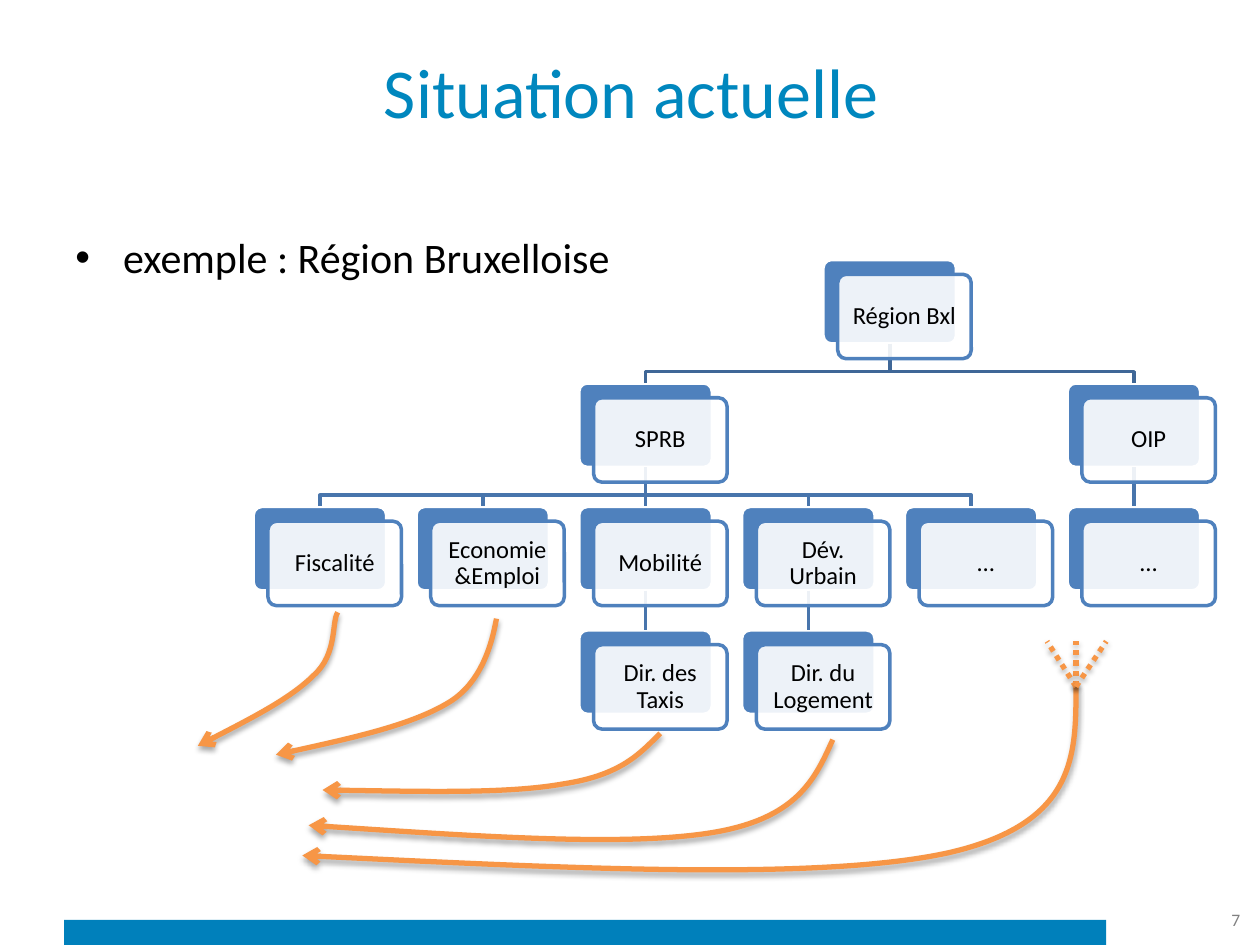
"""Build the slide on the current organisation of the Brussels Region."""
from dataclasses import dataclass

from lxml import etree
from pptx import Presentation
from pptx.dml.color import RGBColor
from pptx.enum.dml import MSO_LINE
from pptx.enum.shapes import MSO_CONNECTOR, MSO_SHAPE
from pptx.enum.text import MSO_ANCHOR, PP_ALIGN
from pptx.oxml import parse_xml
from pptx.oxml.ns import nsdecls, qn
from pptx.util import Inches, Pt

RECTANGLE, ROUNDED = MSO_SHAPE.RECTANGLE, MSO_SHAPE.ROUNDED_RECTANGLE
STRAIGHT, DOTTED = MSO_CONNECTOR.STRAIGHT, MSO_LINE.ROUND_DOT
TOP, MIDDLE = MSO_ANCHOR.TOP, MSO_ANCHOR.MIDDLE
LEFT, CENTER, RIGHT = PP_ALIGN.LEFT, PP_ALIGN.CENTER, PP_ALIGN.RIGHT
TOP_SITE, BOTTOM_SITE = 0, 2

GRID_COLUMNS, GRID_ROWS = 100, 75
CELL = Inches(0.1)
CHART_LEFT, CHART_TOP = 20.1, 20.6
COLUMN_STEP, ROW_STEP = 12.92, 9.8
CARD_WIDTH, CARD_HEIGHT = 10.6, 6.7
CARD_OFFSET, ELBOW_DROP = 1.17, 8.9


@dataclass(frozen=True)
class Theme:
    """Colours, font and type sizes of the slide."""
    font: str = "Calibri"
    title: str = "0087BE"
    band: str = "0080BB"
    text: str = "000000"
    muted: str = "808080"
    card: str = "4F81BD"
    paper: str = "FFFFFF"
    links: tuple = ("3F6797", "4875AC", "4875AC")
    arrow: str = "F79646"
    title_size: int = 40
    body_size: int = 24
    card_size: int = 14
    number_size: int = 10
    line_width: int = 2
    arrow_width: int = 3


THEME = Theme()

UNITS = {
    "region": ("Région Bxl", 3.5, 0, None),
    "sprb": ("SPRB", 2, 1, "region"),
    "oip": ("OIP", 5, 1, "region"),
    "tax": ("Fiscalité", 0, 2, "sprb"),
    "economy": ("Economie&Emploi", 1, 2, "sprb"),
    "mobility": ("Mobilité", 2, 2, "sprb"),
    "urban": ("Dév. Urbain", 3, 2, "sprb"),
    "other": ("…", 4, 2, "sprb"),
    "oip_other": ("…", 5, 2, "oip"),
    "taxis": ("Dir. des Taxis", 2, 3, "mobility"),
    "housing": ("Dir. du Logement", 3, 3, "urban"),
}

CURVES = [
    [(24, 67.9), (44.5, 68.9), (65, 69.9), (75.2, 67.7), (85.4, 65.4), (85.4, 60), (85.4, 54.5)],
    [(24.5, 65.5), (37, 66.3), (49.4, 67.2), (56.4, 66.1), (63.3, 65), (64.7, 61.8), (66.1, 58.7)],
    [(25.6, 62.7), (33, 62.8), (40.4, 63), (44.8, 62.2), (49.3, 61.5), (50.8, 59.8), (52.4, 58.2)],
    [(21.9, 59.9), (27.4, 58.7), (32.8, 57.5), (35.7, 55.7), (38.6, 53.9), (39.2, 50.1), (39.4, 49.1)],
    [(15.7, 59.2), (19.4, 57.3), (23.1, 55.4), (24.9, 53.6), (26.8, 51.9), (26.3, 49.4), (26.8, 48.6)],
]
FORK_BASE, FORK_TOP, FORK_TIPS = (85.4, 54.5), 50.9, (85.4, 83.1, 87.8)


def cells(*values):
    """Turn grid cells into slide lengths."""
    return [round(value * CELL) for value in values]


def color(value):
    """Make a colour from its hex code."""
    return RGBColor.from_string(value)


def set_line(shape, value, width):
    """Give an outline its colour and width."""
    shape.line.color.rgb = color(value)
    shape.line.width = Pt(width)


def add_effects(shape, shadowed):
    """Set either a soft shadow or no effect at all."""
    shadow = ('<a:outerShdw blurRad="40000" dist="23000" dir="5400000" rotWithShape="0">'
              '<a:srgbClr val="000000"><a:alpha val="35000"/></a:srgbClr></a:outerShdw>')
    content = shadow if shadowed else ""
    properties = shape.element.spPr
    for effects in properties.findall(qn("a:effectLst")):
        properties.remove(effects)
    properties.append(parse_xml(f'<a:effectLst {nsdecls("a")}>{content}</a:effectLst>'))


def write(frame, text, size, value, align=CENTER, anchor=MIDDLE):
    """Write one styled paragraph into a text frame."""
    frame.word_wrap = True
    frame.vertical_anchor = anchor
    para = frame.paragraphs[0]
    para.text = text
    para.alignment = align
    para.font.name = THEME.font
    para.font.size = Pt(size)
    para.font.color.rgb = color(value)
    return para


def add_text(page, area, *style):
    """Add a text box over an area of the grid."""
    box = page.shapes.add_textbox(*cells(*area))
    write(box.text_frame, *style)
    return box


def add_bullet_text(page, area, text, drop):
    """Add a bulleted line below the top of its box."""
    box = page.shapes.add_textbox(*cells(*area))
    box.text_frame.margin_top = cells(drop)[0]
    properties = box.text_frame.paragraphs[0]._p.get_or_add_pPr()
    indent = Inches(0.38)
    properties.set("marL", str(indent))
    properties.set("indent", str(-indent))
    etree.SubElement(properties, qn("a:buFont")).set("typeface", "Arial")
    etree.SubElement(properties, qn("a:buChar")).set("char", "•")
    write(box.text_frame, text, THEME.body_size, THEME.text, LEFT, TOP)


def add_panel(page, kind, area, fill):
    """Add a filled shape without shadow or outline."""
    panel = page.shapes.add_shape(kind, *cells(*area))
    panel.shadow.inherit = False
    panel.fill.solid()
    panel.fill.fore_color.rgb = color(fill)
    panel.line.fill.background()
    return panel


def add_card(page, column, row, fill, outline, offset=0):
    """Add a rounded card at a column and row of the chart."""
    area = (CHART_LEFT + column * COLUMN_STEP + offset,
            CHART_TOP + row * ROW_STEP + offset, CARD_WIDTH, CARD_HEIGHT)
    card = add_panel(page, ROUNDED, area, fill)
    card.adjustments[0] = 0.1
    set_line(card, outline, THEME.line_width)
    return card


def add_label_card(page, label, column, row):
    """Add the translucent front card with its label."""
    card = add_card(page, column, row, THEME.paper, THEME.card, CARD_OFFSET)
    paint = card.element.spPr.find(qn("a:solidFill"))[0]
    etree.SubElement(paint, qn("a:alpha")).set("val", "90000")
    frame = card.text_frame
    frame.margin_left = frame.margin_right = Inches(0.08)
    frame.margin_top = frame.margin_bottom = Inches(0.08)
    write(frame, label, THEME.card_size, THEME.text).line_spacing = 0.9


def add_open_line(page, points):
    """Add an unfilled open line through grid points."""
    start, *rest = [cells(*point) for point in points]
    builder = page.shapes.build_freeform(*start)
    builder.add_line_segments(rest, close=False)
    shape = builder.convert_to_shape()
    shape.fill.background()
    return shape


def add_link(page, parent, child, parent_row):
    """Link a parent card to a child card, with an elbow if needed."""
    start, end = [(card.left + card.width / 2) / CELL for card in (parent, child)]
    if abs(start - end) < 0.1:
        link = page.shapes.add_connector(STRAIGHT, 0, 0, 0, 0)
        link.begin_connect(parent, BOTTOM_SITE)
        link.end_connect(child, TOP_SITE)
    else:
        top = CHART_TOP + parent_row * ROW_STEP
        elbow = top + ELBOW_DROP
        link = add_open_line(page, [(start, top + CARD_HEIGHT), (start, elbow),
                                    (end, elbow), (end, top + ROW_STEP)])
    set_line(link, THEME.links[parent_row], THEME.line_width)
    add_effects(link, shadowed=False)


def add_curved_arrow(page, points):
    """Add a shadowed Bézier curve with an arrowhead at its start."""
    curve = add_open_line(page, points)
    steps = list(curve.element.iter(qn("a:lnTo")))
    outline = steps[0].getparent()
    for first in range(0, len(steps), 3):
        bend = etree.SubElement(outline, qn("a:cubicBezTo"))
        for step in steps[first:first + 3]:
            bend.append(step[0])
            outline.remove(step)
    set_line(curve, THEME.arrow, THEME.arrow_width)
    etree.SubElement(curve.get_or_add_ln(), qn("a:headEnd")).set("type", "arrow")
    add_effects(curve, shadowed=True)


def add_fork(page):
    """Add the dotted lines that fan out from the longest arrow."""
    for tip in FORK_TIPS:
        prong = page.shapes.add_connector(STRAIGHT, *cells(*FORK_BASE, tip, FORK_TOP))
        set_line(prong, THEME.arrow, THEME.arrow_width)
        prong.line.dash_style = DOTTED
        add_effects(prong, shadowed=True)


def add_organisation(page):
    """Add back cards, links and labelled cards from back to front."""
    backs = {name: add_card(page, column, row, THEME.card, THEME.paper)
             for name, (_, column, row, _) in UNITS.items()}
    for name, (_, _, row, parent) in UNITS.items():
        if parent:
            add_link(page, backs[parent], backs[name], row - 1)
    for label, column, row, _ in UNITS.values():
        add_label_card(page, label, column, row)


def main():
    """Build and save the deck."""
    deck = Presentation()
    deck.slide_width, deck.slide_height = cells(GRID_COLUMNS, GRID_ROWS)
    page = deck.slides.add_slide(deck.slide_layouts[6])
    add_panel(page, RECTANGLE, (5.1, 73, 82.7, 2), THEME.band)
    add_text(page, (5.1, 2.1, 90, 10.1), "Situation actuelle", THEME.title_size, THEME.title)
    add_bullet_text(page, (5, 13.1, 90, 55.9), "exemple : Région Bruxelloise", 5.3)
    add_text(page, (91.2, 71, 8.2, 4), "7", THEME.number_size, THEME.muted, RIGHT)
    add_organisation(page)
    for points in CURVES:
        add_curved_arrow(page, points)
    add_fork(page)
    deck.save("out.pptx")


if __name__ == "__main__":
    main()
